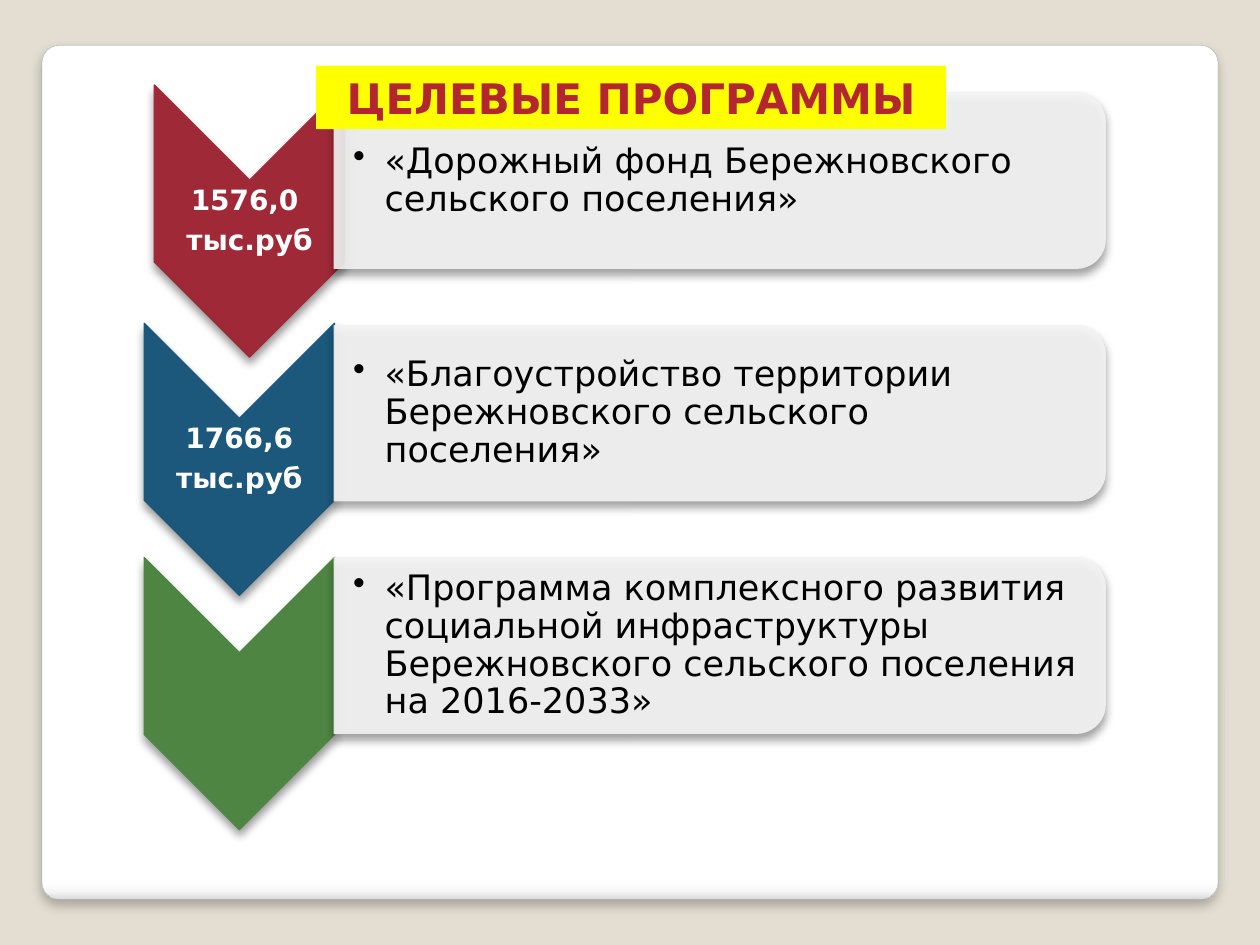
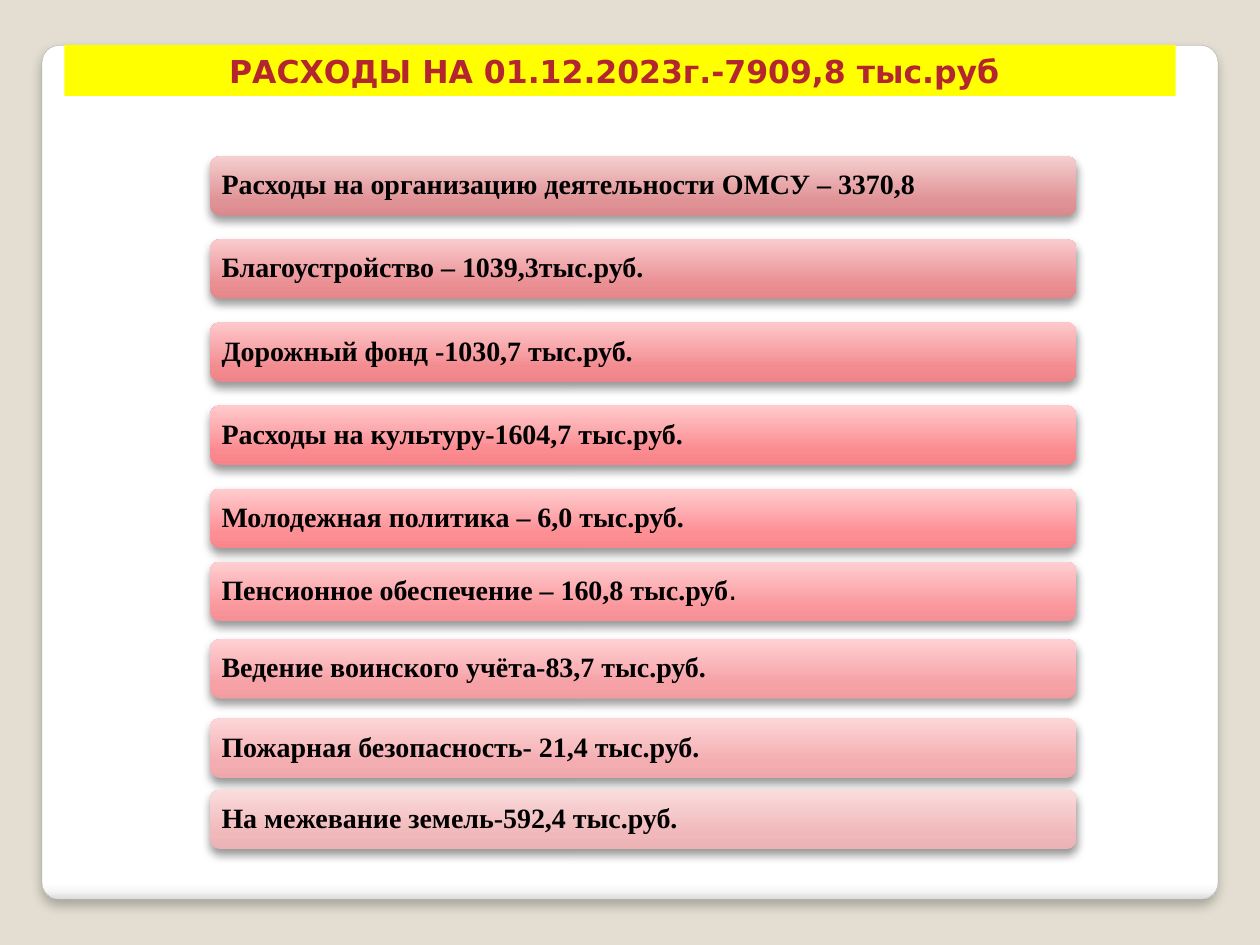
"""Two budget slides: target programmes and spending."""
from lxml import etree
from pptx import Presentation
from pptx import util as u
from pptx.dml import color
from pptx.enum import shapes, text
from pptx.oxml import ns

SANS, SERIF = "DejaVu Sans", "Times New Roman"
KIND = shapes.MSO_SHAPE
ALIGN, ANCHOR = text.PP_ALIGN, text.MSO_ANCHOR
INK = [(0, "E07C80"), (75, "B3262F"), (100, "940010")]
PANEL = [(0, "FFFFFF"), (98, "FFFFFF"), (99, "F7F7F7"), (100, "DADADA")]
SOFT = dict(alpha=40, blur=5.2, dist=3)

STEPS = [
    ("9F2936", (5.8, -4.3), ["1576,0 ", "тыс.руб"],
     "«Дорожный фонд Бережновского сельского поселения»"),
    ("1B587C", (0, -1), ["1766,6", "тыс.руб"],
     "«Благоустройство территории Бережновского сельского поселения»"),
    ("4E8542", (0, 0), [],
     "«Программа комплексного развития социальной инфраструктуры "
     "Бережновского сельского поселения на 2016-2033»"),
]

COSTS = [
    (0, "DA8A8E E09396 F5CECF", "Расходы на организацию деятельности ОМСУ – 3370,8"),
    (47.5, "E4878B EA8F93 F9CBCD", "Благоустройство – 1039,3тыс.руб."),
    (95, "ED848A F38C91 FEC9CB", "Дорожный фонд -1030,7 тыс.руб."),
    (142.5, "F68389 FB8B90 FFCBCD", "Расходы на культуру-1604,7 тыс.руб."),
    (190, "F8878D FD8E94 FFCDCF", "Молодежная политика – 6,0 тыс.руб."),
    (231.8, "F59196 FA979C FFCFD1", "Пенсионное обеспечение – 160,8 тыс.руб", "."),
    (276, "F19CA0 F6A1A6 FFD1D4", "Ведение воинского учёта-83,7 тыс.руб."),
    (321.3, "EEA7AB F3ACB0 FDD6D8", "Пожарная безопасность- 21,4 тыс.руб."),
    (362, "ECB3B6 F0B8BA FBDCDD", "На межевание земель-592,4 тыс.руб."),
]


def put(item, vals):
    """Set each attribute named in the dict."""
    for key, val in vals.items():
        setattr(item, key, val)


def hue(code):
    """Turn a hex string into a colour."""
    return color.RGBColor.from_string(code)


def node(root, tag, **vals):
    """Add a drawing element with the given attributes."""
    return etree.SubElement(root, ns.qn(tag), {k: str(v) for k, v in vals.items()})


def solid(fill, code):
    """Fill with one colour."""
    fill.solid()
    fill.fore_color.rgb = hue(code)


def blend(fill, root, stops, turn):
    """Fill with a linear gradient, angle in clockwise degrees."""
    fill.gradient()
    grad = root.find(".//" + ns.qn("a:gradFill"))
    for kid in list(grad):
        grad.remove(kid)
    group = node(grad, "a:gsLst")
    for pos, code in stops:
        stop = node(group, "a:gs", pos=pos * 1000)
        node(stop, "a:srgbClr", val=code)
    node(grad, "a:lin", ang=turn * 60000, scaled=0)


def shade(shape, alpha, blur, dist):
    """Give the shape a black shadow that falls straight down."""
    shape.shadow.inherit = False
    root = shape._element.spPr.find(ns.qn("a:effectLst"))
    cast = node(root, "a:outerShdw", blurRad=u.Pt(blur), dist=u.Pt(dist),
                dir=5400000, rotWithShape=0)
    node(node(cast, "a:srgbClr", val="000000"), "a:alpha", val=alpha * 1000)


def place(item, x, y, w, h):
    """Move and size an item, in points."""
    put(item, dict(left=u.Pt(x), top=u.Pt(y), width=u.Pt(w), height=u.Pt(h)))


def form(slide, kind, x, y, w, h, cast=SOFT, turned=False):
    """Add a shadowed shape that shows in the box, turned a quarter if asked."""
    if turned:
        x, y, w, h = x + (w - h) / 2, y + (h - w) / 2, h, w
    shape = slide.shapes.add_shape(kind, *map(u.Pt, (x, y, w, h)))
    shape.rotation = 90 if turned else 0
    shape.line.fill.background()
    shade(shape, **cast)
    return shape


def setup(frame, inset):
    """Wrap and centre the text upright with even insets."""
    put(frame, dict(word_wrap=True, auto_size=text.MSO_AUTO_SIZE.NONE,
                    vertical_anchor=ANCHOR.MIDDLE))
    put(frame, {f"margin_{side}": u.Pt(inset)
                for side in ("left", "right", "top", "bottom")})


def write(para, words, size, code="000000", name=SANS, bold=False):
    """Add a formatted run to a paragraph."""
    run = para.add_run()
    run.text = words
    put(run.font, dict(size=u.Pt(size), name=name, bold=bold))
    run.font.color.rgb = hue(code)
    return run


def label(slide, box, lines, **look):
    """Add a text box with one paragraph a line and return its frame."""
    frame = slide.shapes.add_textbox(*map(u.Pt, box)).text_frame
    setup(frame, 0.7)
    for i, words in enumerate(lines):
        para = frame.add_paragraph() if i else frame.paragraphs[0]
        para.line_spacing = 0.9
        write(para, words, **look)
    return frame


def base(deck):
    """Put the backdrop and the white panel on the title layout."""
    page = deck.slide_layouts[5]
    solid(deck.slide_master.background.fill, "E3DED1")
    slide = deck.slides.add_slide(page)
    panel = form(slide, KIND.ROUNDED_RECTANGLE, 24, 26, 672, 488,
                 dict(alpha=25, blur=6, dist=4))
    panel.adjustments[0] = 0.02
    blend(panel.fill, panel._element.spPr, PANEL, 90)
    solid(panel.line.fill, "A4A4A4")
    panel.line.width = u.Pt(0.16)
    page.shapes._spTree.insert(2, panel._element)
    return slide


def head(slide, words, size, box):
    """Set the title on a yellow band above the other parts."""
    title = slide.shapes.title
    place(title, *box)
    solid(title.fill, "FFFF00")
    frame = title.text_frame
    setup(frame, 3.6)
    para = frame.paragraphs[0]
    para.alignment = ALIGN.CENTER
    run = write(para, words, size, bold=True)
    blend(run.font.fill, run._r, INK, 90)
    slide.shapes._spTree.append(title._element)


def arrow(slide, x, y, w, h, code, lines):
    """Draw a chevron pointing down with its sum."""
    shape = form(slide, KIND.CHEVRON, x, y, w, h, turned=True)
    solid(shape.fill, code)
    solid(shape.line.fill, code)
    shape.line.width = u.Pt(0.75)
    if lines:
        frame = label(slide, (x, y + w / 2, w, h - w), lines,
                      size=16, code="FFFFFF", bold=True)
        for para in frame.paragraphs:
            put(para, dict(alignment=ALIGN.CENTER, space_after=u.Pt(5.6)))


def card(slide, x, y, w, h, words):
    """Draw a pale card with a bulleted programme name."""
    shape = form(slide, KIND.ROUND_2_SAME_RECTANGLE, x, y, w, h, turned=True)
    solid(shape.fill, "F4F4F4")
    tint = shape._element.spPr.find(".//" + ns.qn("a:srgbClr"))
    node(tint, "a:alpha", val=90000)
    frame = label(slide, (x, y + 5, w - 5, h - 10), [words], size=20)
    frame.margin_left = u.Pt(11.2)
    para = frame.paragraphs[0]
    para.space_after = u.Pt(3)
    props = para._p.get_or_add_pPr()
    props.set("marL", str(u.Pt(18)))
    props.set("indent", str(u.Pt(-18)))
    node(props, "a:buChar", char="•")


def plan(slide, x, y, pitch):
    """Stack the programmes as arrows with cards."""
    for i, (code, (dx, dy), lines, words) in enumerate(STEPS):
        top = y + i * pitch
        arrow(slide, x + dx, top + dy, 108.8, 155.5, code, lines)
        card(slide, x + 108.2, top, 441.3, 100.8, words)


def costs(slide, x, y, w, h):
    """Stack the spending bars."""
    for drop, codes, words, *tail in COSTS:
        bar = form(slide, KIND.ROUNDED_RECTANGLE, x, y + drop, w, h)
        blend(bar.fill, bar._element.spPr, zip((0, 25, 100), codes.split()), 270)
        setup(bar.text_frame, 5)
        para = bar.text_frame.paragraphs[0]
        put(para, dict(alignment=ALIGN.LEFT, line_spacing=0.9))
        write(para, words, 16, name=SERIF, bold=True)
        for end in tail:
            write(para, end, 16)


def main():
    """Build and save the slides."""
    deck = Presentation()
    put(deck, dict(slide_width=u.Pt(720), slide_height=u.Pt(540)))
    first = base(deck)
    plan(first, 82.4, 52.9, 132.85)
    head(first, "ЦЕЛЕВЫЕ ПРОГРАММЫ", 24, (180.6, 37.5, 360, 36.3))
    second = deck.slides.add_slide(deck.slide_layouts[5])
    costs(second, 120, 89.2, 495.2, 34)
    head(second, "РАСХОДЫ НА 01.12.2023г.-7909,8 тыс.руб ", 18,
         (36.8, 25.7, 635, 29.1))
    deck.save("out.pptx")


if __name__ == "__main__":
    main()
